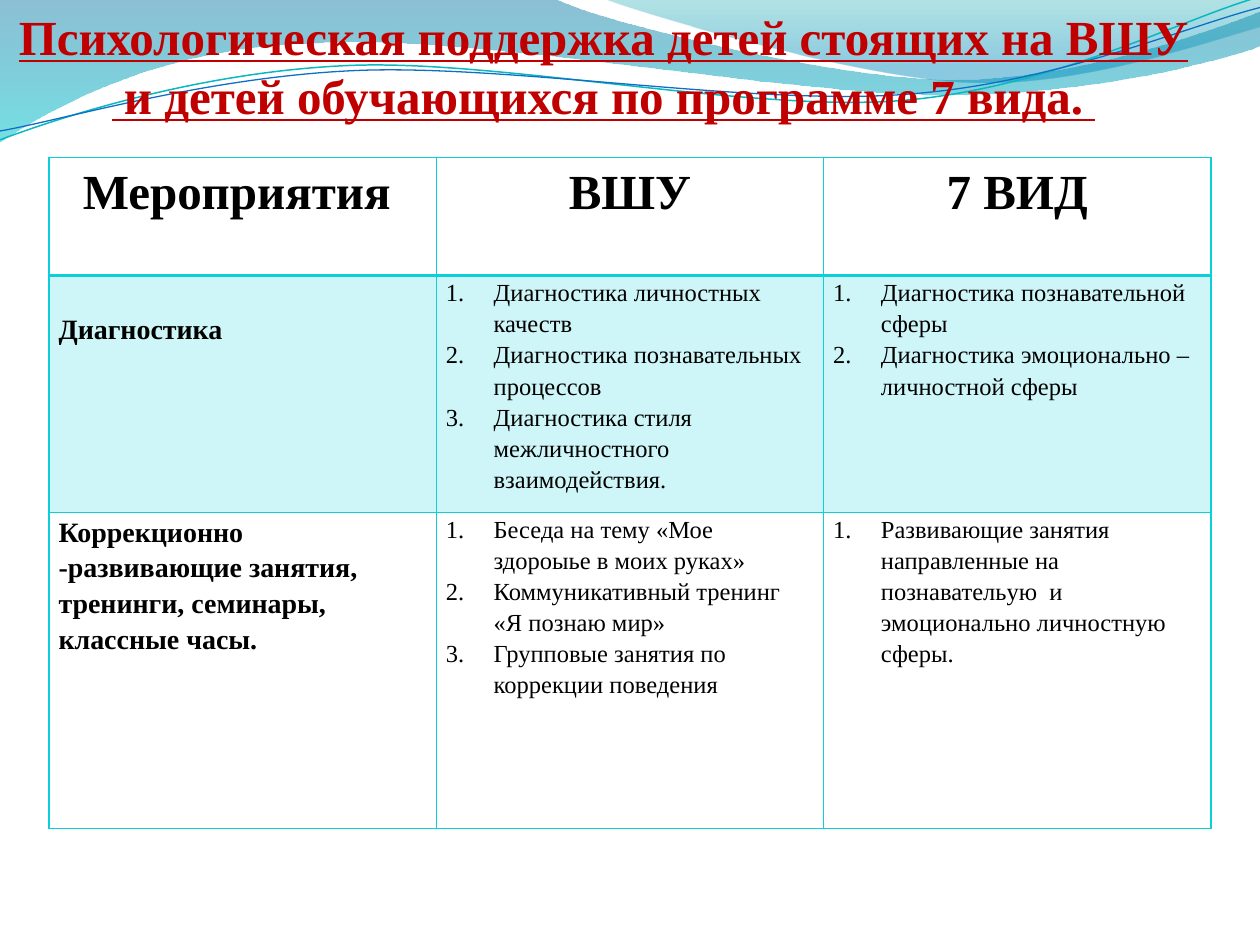
"""Build a slide with a support-programme table under a wave header."""
from math import cos, radians, sin

from lxml import etree
from pptx import Presentation
from pptx.dml.color import RGBColor
from pptx.enum.text import MSO_ANCHOR, MSO_AUTO_SIZE, PP_ALIGN
from pptx.oxml.ns import qn
from pptx.util import Inches, Pt

CENTER, LEFT = PP_ALIGN.CENTER, PP_ALIGN.LEFT
MIDDLE = MSO_ANCHOR.MIDDLE
GROW = MSO_AUTO_SIZE.SHAPE_TO_FIT_TEXT

THEME = {
    "font": "Times New Roman",
    "title": "C00000", "text": "000000", "accent": "0BD0D9",
    "heading_size": 28, "label_size": 16, "item_size": 14,
    "line_spacing": 1.15, "title_spacing": 1.0, "band_opacity": 20,
}

TITLE = [
    "Психологическая поддержка детей стоящих на ВШУ",
    " и детей обучающихся по программе 7 вида. ",
]
HEADINGS = ["Мероприятия ", "ВШУ", "7 ВИД"]
ACTIVITIES = [
    ("Диагностика",
     ["Диагностика личностных качеств",
      "Диагностика познавательных процессов",
      "Диагностика стиля межличностного взаимодействия."],
     ["Диагностика познавательной сферы",
      "Диагностика эмоционально – личностной сферы"]),
    ("Коррекционно -развивающие занятия, тренинги, семинары, классные часы.",
     ["Беседа на тему «Мое здороыье в моих руках»",
      "Коммуникативный тренинг «Я познаю мир»",
      "Групповые занятия по коррекции поведения"],
     ["Развивающие занятия направленные на познавательую  и эмоционально личностную сферы."]),
]
ROW_HEIGHTS = [0.94, 1.87, 2.51]
TABLE_WIDTH = 9.22

TILT = -2.7
WAVES = [
    {"start": (0, 0),
     "segments": [
         (4.4, -0.01), (4.76, 0.17, 6.64, 0.63, 7.58, 0.63),
         (8.53, 0.63, 9.58, 0.26, 10, 0.09), (10.01, 0.36),
         (9.83, 0.44, 8.7, 0.76, 7.46, 0.75), (6.22, 0.75, 3.82, 0.28, 2.57, 0.34),
         (1.29, 0.36, 0.46, 0.83, -0.01, 1.13)],
     "stops": [(0, "0074A1", 45), (1, "00C6CF", 55)]},
    {"start": (4.79, -0.01),
     "segments": [
         (5.09, 0.11, 6.82, 0.62, 7.69, 0.65), (8.56, 0.69, 9.61, 0.32, 10, 0.21), (10, 0)],
     "stops": [(0, "00A1A9", 30), (0.8, "008BBF", 45)]},
    {"start": (0, 1.11),
     "segments": [
         (0.48, 0.93, 1.58, 0.57, 2.77, 0.52), (3.95, 0.47, 5.93, 0.89, 7.13, 0.8),
         (8.33, 0.71, 9.38, 0.15, 9.98, -0.02)],
     "line": ("0AB8BF", 0.85), "pivot": (4.99, 0.57)},
    {"start": (0, 1.04),
     "segments": [
         (0.47, 0.96, 1.64, 0.61, 2.83, 0.56), (4.03, 0.51, 5.97, 0.84, 7.17, 0.75),
         (8.36, 0.67, 9.41, 0.21, 10, 0.06)],
     "line": ("0F6FC6", 0.75), "pivot": (5, 0.59)},
]


def place(values, pivot):
    """Return the points in a flat coordinate list in EMU, turned level about a pivot."""
    points = list(zip(values[::2], values[1::2]))
    if pivot:
        (px, py), turn = pivot, radians(-TILT)
        points = [(px + (x - px) * cos(turn) - (y - py) * sin(turn),
                   py + (x - px) * sin(turn) + (y - py) * cos(turn)) for x, y in points]
    return [(Inches(x), Inches(y)) for x, y in points]


def set_opacity(color, percent):
    """Add an opacity percentage to a colour element."""
    etree.SubElement(color, qn("a:alpha"), val=str(percent * 1000))


def draw_outline(page, wave):
    """Draw an outline of straight and cubic segments."""
    pivot = wave.get("pivot")
    start = place(wave["start"], pivot)[0]
    segments = [place(segment, pivot) for segment in wave["segments"]]
    builder = page.shapes.build_freeform(*start, scale=1.0)
    builder.add_line_segments([points[-1] for points in segments], close="stops" in wave)
    shape = builder.convert_to_shape()
    for node, points in zip(list(shape.element.iter(qn("a:lnTo"))), segments):
        if len(points) == 3:
            curve = etree.Element(qn("a:cubicBezTo"))
            for x, y in points:
                etree.SubElement(curve, qn("a:pt"), x=str(x - shape.left), y=str(y - shape.top))
            node.getparent().replace(node, curve)
    if pivot:
        shape.rotation = TILT
    return shape


def draw_wave(page, wave):
    """Draw one filled or stroked wave."""
    shape = draw_outline(page, wave)
    shape.shadow.inherit = False
    if "line" in wave:
        color, width = wave["line"]
        shape.fill.background()
        shape.line.color.rgb = RGBColor.from_string(color)
        shape.line.width = Pt(width)
        return
    shape.line.fill.background()
    shape.fill.gradient()
    shape.fill.gradient_angle = 270
    for stop, (position, color, _) in zip(shape.fill.gradient_stops, wave["stops"]):
        stop.position = position
        stop.color.rgb = RGBColor.from_string(color)
    colors = list(shape.element.iter(qn("a:srgbClr")))
    for color, (_, _, percent) in zip(colors, wave["stops"]):
        set_opacity(color, percent)


def write(frame, lines, size, color="text", align=LEFT, spacing="line_spacing",
          numbered=False, **font):
    """Write formatted paragraphs into a text frame."""
    font_format = {"name": THEME["font"], "size": Pt(size), **font}
    for index, line in enumerate(lines):
        para = frame.paragraphs[0] if index == 0 else frame.add_paragraph()
        para.alignment = align
        para.line_spacing = THEME[spacing]
        span = para.add_run()
        span.text = line
        for name, value in font_format.items():
            setattr(span.font, name, value)
        span.font.color.rgb = RGBColor.from_string(THEME[color])
        if numbered:
            properties = para._p.get_or_add_pPr()
            properties.set("marL", str(Inches(0.38)))
            properties.set("indent", str(-Inches(0.38)))
            etree.SubElement(properties, qn("a:buAutoNum"), type="arabicPeriod")


def style_cell(cell, banded, bottom=1, top=1):
    """Set margins, borders and fill of a table cell."""
    cell.margin_left = cell.margin_right = Pt(5.4)
    cell.margin_top = cell.margin_bottom = 0
    properties = cell._tc.get_or_add_tcPr()
    for side, width in {"lnL": 1, "lnR": 1, "lnT": top, "lnB": bottom}.items():
        border = etree.SubElement(properties, qn(f"a:{side}"), w=str(Pt(width)))
        paint = etree.SubElement(border, qn("a:solidFill"))
        etree.SubElement(paint, qn("a:srgbClr"), val=THEME["accent"])
    if banded:
        cell.fill.solid()
        cell.fill.fore_color.rgb = RGBColor.from_string(THEME["accent"])
        set_opacity(properties.find(qn("a:solidFill"))[0], THEME["band_opacity"])
    else:
        cell.fill.background()


def add_activity_table(page):
    """Add the table of activities."""
    table = page.shapes.add_table(
        len(ROW_HEIGHTS), len(HEADINGS), Inches(0.39), Inches(1.25),
        Inches(TABLE_WIDTH), Inches(sum(ROW_HEIGHTS))).table
    table.first_row = table.horz_banding = False
    for row, height in zip(table.rows, ROW_HEIGHTS):
        row.height = Inches(height)
    for column, heading in enumerate(HEADINGS):
        cell = table.cell(0, column)
        style_cell(cell, banded=False, bottom=2)
        write(cell.text_frame, [heading], THEME["heading_size"], align=CENTER, bold=True)
    for row, (label, *lists) in enumerate(ACTIVITIES, 1):
        cells = list(table.rows[row].cells)
        for cell in cells:
            style_cell(cell, banded=row == 1, top=2 if row == 1 else 1)
        write(cells[0].text_frame, [label], THEME["label_size"], bold=True)
        for cell, items in zip(cells[1:], lists):
            write(cell.text_frame, items, THEME["item_size"], numbered=True, bold=False)
    table.cell(1, 0).margin_top = Inches(0.27)


def main():
    """Build and save the deck."""
    deck = Presentation()
    deck.slide_width, deck.slide_height = Inches(10), Inches(7.5)
    page = deck.slides.add_slide(deck.slide_layouts[5])
    for wave in WAVES:
        draw_wave(page, wave)
    title = page.shapes.title
    title.element.getparent().append(title.element)
    box = {"left": 0, "top": 0, "width": 9.58, "height": 1.04}
    for name, value in box.items():
        setattr(title, name, Inches(value))
    frame_format = {"word_wrap": False, "auto_size": GROW, "vertical_anchor": MIDDLE}
    for name, value in frame_format.items():
        setattr(title.text_frame, name, value)
    write(title.text_frame, TITLE, THEME["heading_size"], "title", CENTER,
          "title_spacing", bold=True, underline=True)
    add_activity_table(page)
    deck.save("out.pptx")


if __name__ == "__main__":
    main()
